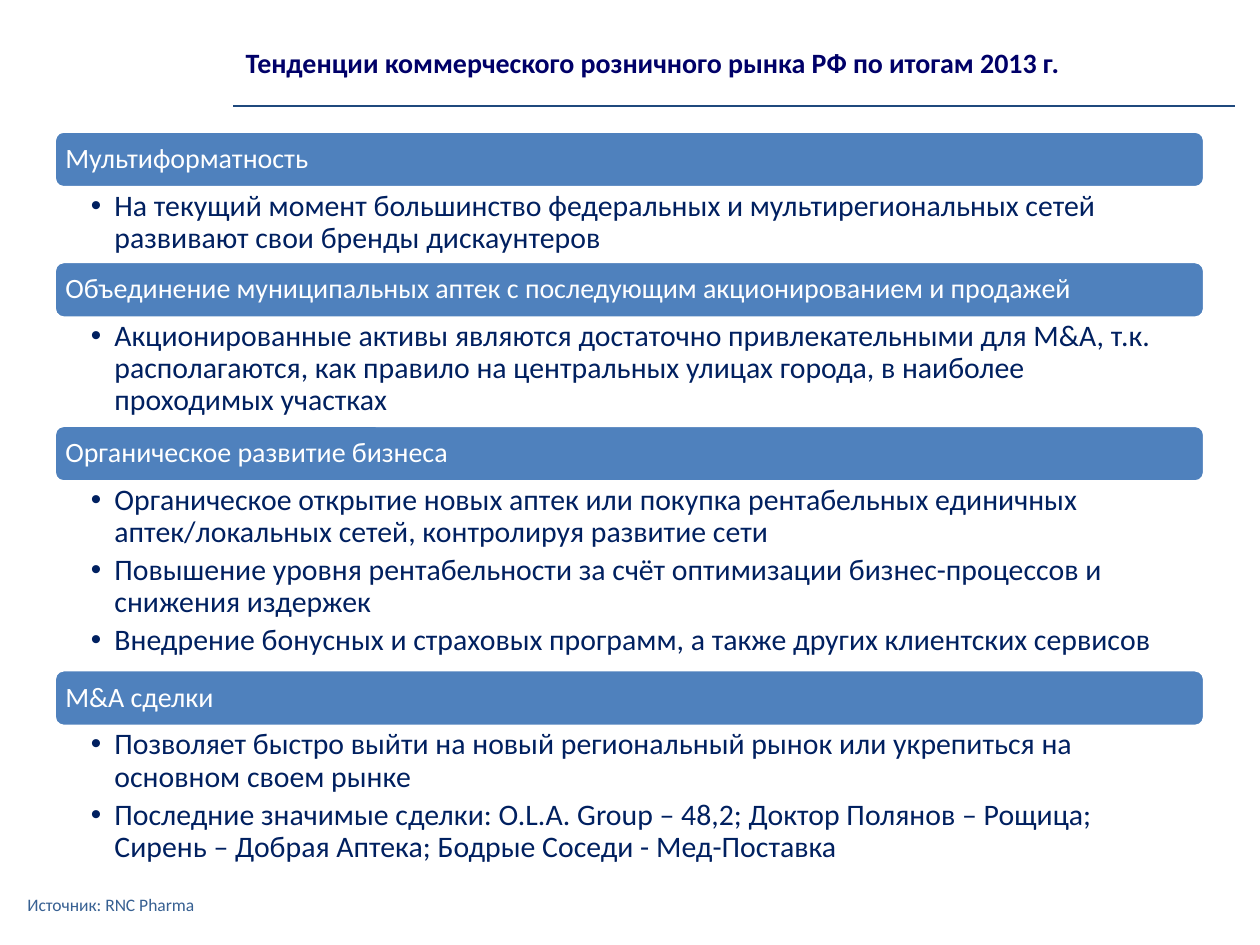
import pptx
import pptx.dml.color
import pptx.enum.shapes
import pptx.enum.text
import pptx.oxml.ns
import pptx.util
from lxml import etree

Pt = pptx.util.Pt
RGBColor = pptx.dml.color.RGBColor
ANCHOR = pptx.enum.text.MSO_ANCHOR
qn = pptx.oxml.ns.qn

WHITE = RGBColor(0xFF, 0xFF, 0xFF)
BLUE = RGBColor(0x4F, 0x81, 0xBD)
NAVY = RGBColor(0x00, 0x20, 0x60)
TITLE = RGBColor(0x00, 0x00, 0x68)
RULE = RGBColor(0x1F, 0x49, 0x7D)
SOURCE = RGBColor(0x37, 0x60, 0x92)

LEFT, TOP, WIDTH = 31, 74.9, 657.4
BAR = 32.4

# Heading, height of its list, list items
PARTS = [
    ("Мультиформатность", 42.1, [
        "На текущий момент большинство федеральных и мультирегиональных "
        "сетей развивают свои бренды дискаунтеров",
    ]),
    ("Объединение муниципальных аптек с последующим акционированием и "
     "продажей", 61.2, [
         "Акционированные активы являются достаточно привлекательными для "
         "M&A, т.к. располагаются, как правило на центральных улицах города, "
         "в наиболее проходимых участках",
     ]),
    ("Органическое развитие бизнеса", 107.3, [
        "Органическое открытие новых аптек или покупка рентабельных "
        "единичных аптек/локальных сетей, контролируя развитие сети",
        "Повышение уровня рентабельности за счёт оптимизации "
        "бизнес-процессов и снижения издержек",
        "Внедрение бонусных и страховых программ, а также других "
        "клиентских сервисов",
    ]),
    ("M&A сделки", 84.2, [
        "Позволяет быстро выйти на новый региональный рынок или укрепиться "
        "на основном своем рынке",
        "Последние значимые сделки: O.L.A. Group – 48,2; Доктор Полянов – "
        "Рощица; Сирень – Добрая Аптека; Бодрые Соседи - Мед-Поставка",
    ]),
]


def place(shape, x, y, w, h):
    shape.left, shape.top = Pt(x), Pt(y)
    shape.width, shape.height = Pt(w), Pt(h)


def set_frame(frame, anchor, sides=7.2, ends=3.6):
    frame.word_wrap = True
    frame.auto_size = pptx.enum.text.MSO_AUTO_SIZE.NONE
    frame.vertical_anchor = anchor
    frame.margin_left = frame.margin_right = Pt(sides)
    frame.margin_top = frame.margin_bottom = Pt(ends)


def set_text(para, text, size, color, bold=False):
    para.text = text
    para.alignment = pptx.enum.text.PP_ALIGN.LEFT
    para.space_before = Pt(0)
    for run in para.runs:
        font = run.font
        font.name, font.size, font.bold = "Calibri", Pt(size), bold
        font.color.rgb = color


def add_bullet(para, indent):
    props = para._p.get_or_add_pPr()
    props.set("marL", str(Pt(indent)))
    props.set("indent", str(-Pt(indent)))
    etree.SubElement(props, qn("a:buFont")).set("typeface", "Arial")
    etree.SubElement(props, qn("a:buChar")).set("char", "•")


def fill_title(title):
    place(title, 133.2, 22.3, 578.2, 26.6)
    set_frame(title.text_frame, ANCHOR.TOP)
    set_text(title.text_frame.paragraphs[0],
             "Тенденции коммерческого розничного рынка РФ по итогам 2013 г.",
             16, TITLE, True)


def add_rule(slide):
    line = slide.shapes.add_connector(
        pptx.enum.shapes.MSO_CONNECTOR.STRAIGHT,
        Pt(133.2), Pt(60.5), Pt(705.6), Pt(60.5))
    line.line.color.rgb = RULE
    line.line.width = Pt(1.5)
    etree.SubElement(line._element.spPr, qn("a:effectLst"))


def add_bar(slide, top, text):
    bar = slide.shapes.add_shape(
        pptx.enum.shapes.MSO_SHAPE.ROUNDED_RECTANGLE,
        Pt(LEFT), Pt(top), Pt(WIDTH), Pt(BAR))
    bar.shadow.inherit = False
    bar.fill.solid()
    bar.fill.fore_color.rgb = BLUE
    bar.line.color.rgb = WHITE
    bar.line.width = Pt(2)
    set_frame(bar.text_frame, ANCHOR.MIDDLE, 4.8, 4.8)
    para = bar.text_frame.paragraphs[0]
    set_text(para, text, 16, WHITE)
    para.line_spacing = 0.9


def fill_list(body, top, height, items):
    place(body, LEFT, top, WIDTH, height)
    frame = body.text_frame
    set_frame(frame, ANCHOR.TOP, ends=1.6)
    frame.margin_left, frame.margin_right = Pt(20.9), Pt(12)
    frame.text = "\n".join(items)
    for para, item in zip(frame.paragraphs, items):
        add_bullet(para, 13.5)
        set_text(para, item, 17, NAVY)
        para.line_spacing = 0.9
        para.space_after = Pt(3.4)


def add_source(slide):
    box = slide.shapes.add_textbox(Pt(8.6), Pt(502.6), Pt(228.2), Pt(28.8))
    set_frame(box.text_frame, ANCHOR.MIDDLE)
    set_text(box.text_frame.paragraphs[0], "Источник: RNC Pharma", 10, SOURCE)


def main():
    deck = pptx.Presentation()
    deck.slide_width, deck.slide_height = Pt(720), Pt(540)
    # The comparison layout holds a title and four body placeholders
    slide = deck.slides.add_slide(deck.slide_layouts[4])
    title, *bodies = slide.placeholders
    fill_title(title)
    add_rule(slide)
    top = TOP
    for body, (head, height, items) in zip(bodies, PARTS):
        add_bar(slide, top, head)
        fill_list(body, top + BAR, height, items)
        top += BAR + height
    add_source(slide)
    deck.save("out.pptx")


if __name__ == "__main__":
    main()
